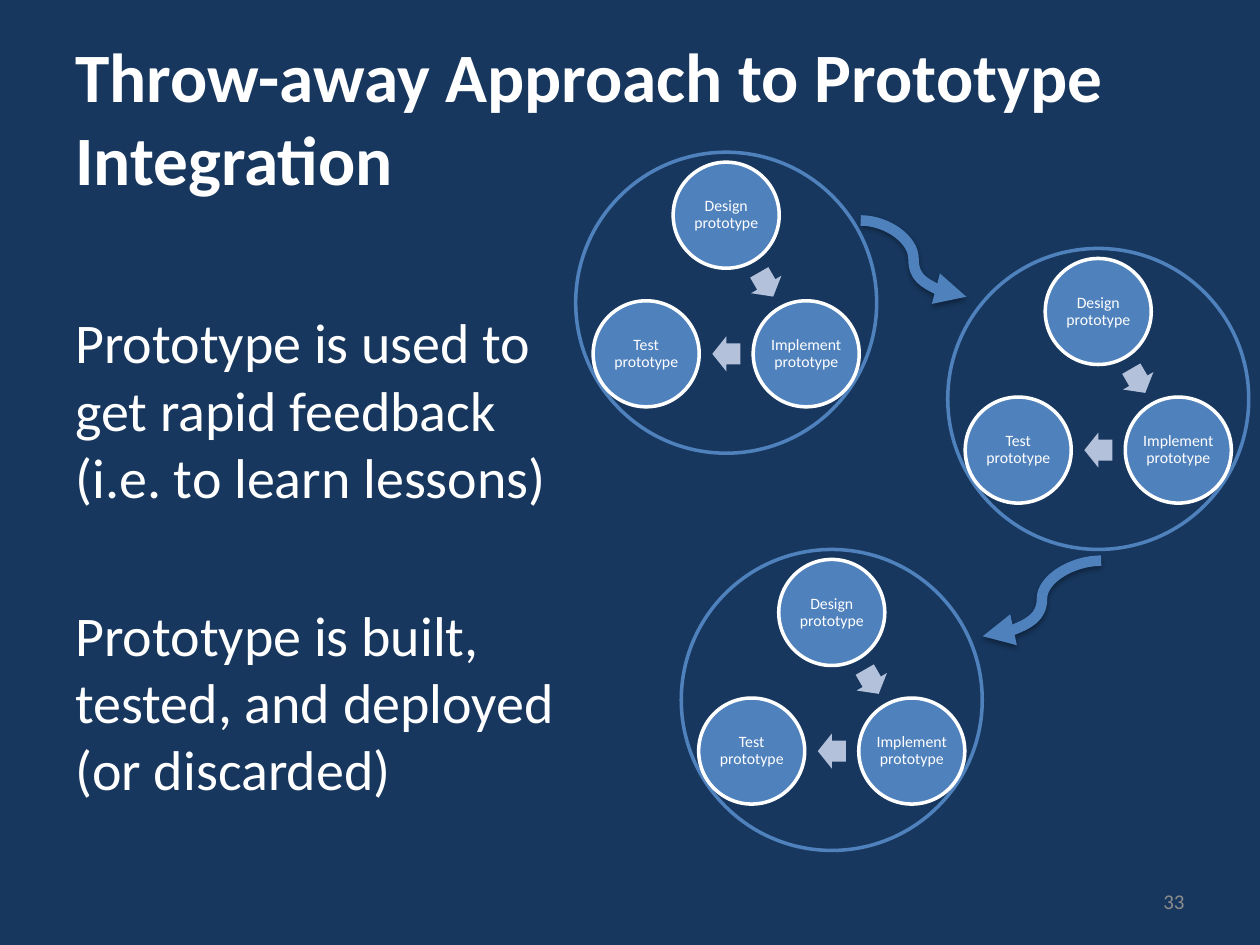
import math

from lxml import etree
from pptx import Presentation
from pptx.dml.color import RGBColor
from pptx.enum.shapes import MSO_CONNECTOR, MSO_SHAPE
from pptx.enum.text import MSO_ANCHOR, PP_ALIGN
from pptx.oxml import parse_xml
from pptx.oxml.ns import nsdecls, qn
from pptx.util import Pt

OVAL, ARROW, CURVE = MSO_SHAPE.OVAL, MSO_SHAPE.RIGHT_ARROW, MSO_CONNECTOR.CURVE
TOP, MIDDLE = MSO_ANCHOR.TOP, MSO_ANCHOR.MIDDLE
LEFT, CENTER, RIGHT = PP_ALIGN.LEFT, PP_ALIGN.CENTER, PP_ALIGN.RIGHT

NAVY, BLUE, PALE, WHITE, GRAY = "17375E", "4F81BD", "B3C1DB", "FFFFFF", "8C8C8C"
FONT = "Calibri"

TITLE = "Throw-away Approach to Prototype Integration"
POINTS = [
    "Prototype is used to get rapid feedback (i.e. to learn lessons)",
    "Prototype is built, tested, and deployed (or discarded)",
]
PAGE_NUMBER = "33"
STEPS = [  # label, angle on the cycle in degrees
    ("Design prototype", -90),
    ("Implement prototype", 30),
    ("Test prototype", 150),
]
RINGS = [(329, 87), (541.6, 142), (389.3, 314)]  # left, top
HANDOVERS = [  # from, to
    ((491.8, 126), (552.2, 169.6)),
    ((629.3, 320.4), (561.6, 363.6)),
]

RING_SIZE, NODE_SIZE = 172, 60.6
CYCLE_RADIUS, CYCLE_DROP = 52.8, 88.8
ARROW_WIDTH, ARROW_HEIGHT = 16, 20


def color(value):
    return RGBColor.from_string(value)


def write(shape, texts, size, ink, align=LEFT, anchor=TOP, bold=False):
    frame = shape.text_frame
    frame.word_wrap = True
    frame.vertical_anchor = anchor
    frame.text = "\n".join(texts)
    for para in frame.paragraphs:
        para.alignment = align
        para.font.name = FONT
        para.font.size = Pt(size)
        para.font.bold = bold
        para.font.color.rgb = color(ink)
    return frame


def add_text(page, area, *args, **options):
    box = page.shapes.add_textbox(*map(Pt, area))
    return write(box, *args, **options)


def add_centered(shapes, kind, x, y, width, height, fill=None, line=None):
    """Add a preset shape whose middle is at x, y."""
    shape = shapes.add_shape(
        kind, Pt(x - width / 2), Pt(y - height / 2), Pt(width), Pt(height))
    shape.shadow.inherit = False
    if fill:
        shape.fill.solid()
        shape.fill.fore_color.rgb = color(fill)
    else:
        shape.fill.background()
    if line:
        shape.line.color.rgb = color(line)
        shape.line.width = Pt(2)
    else:
        shape.line.fill.background()
    return shape


def add_cycle(page, left, top):
    """Add a ring holding the three steps and the arrows between them."""
    middle = left + RING_SIZE / 2
    add_centered(page.shapes, OVAL, middle, top + RING_SIZE / 2,
                 RING_SIZE, RING_SIZE, line=BLUE)
    cycle = page.shapes.add_group_shape().shapes
    previous = None
    for label, degrees in STEPS:
        angle = math.radians(degrees)
        x = middle + CYCLE_RADIUS * math.cos(angle)
        y = top + CYCLE_DROP + CYCLE_RADIUS * math.sin(angle)
        if previous:
            before_x, before_y = previous
            arrow = add_centered(cycle, ARROW, (before_x + x) / 2, (before_y + y) / 2,
                                 ARROW_WIDTH, ARROW_HEIGHT, fill=PALE)
            arrow.adjustments[0] = 0.6
            arrow.rotation = math.degrees(math.atan2(y - before_y, x - before_x))
        node = add_centered(cycle, OVAL, x, y, NODE_SIZE, NODE_SIZE, BLUE, WHITE)
        frame = write(node, [label], 9, WHITE, CENTER, MIDDLE)
        frame.margin_left = frame.margin_right = Pt(0.9)
        frame.margin_top = frame.margin_bottom = Pt(0.9)
        frame.paragraphs[0].line_spacing = 0.9
        previous = x, y


def add_handover(page, start, end):
    """Add a thick curved arrow with a soft shadow below it."""
    curve = page.shapes.add_connector(CURVE, *map(Pt, start + end))
    curve.line.color.rgb = color(BLUE)
    curve.line.width = Pt(6)
    properties = curve.element.spPr
    etree.SubElement(properties.find(qn("a:ln")), qn("a:tailEnd"), type="triangle")
    properties.append(parse_xml(
        f'<a:effectLst {nsdecls("a")}>'
        f'<a:outerShdw blurRad="{Pt(3.1)}" dist="{Pt(1.8)}" dir="5400000" rotWithShape="0">'
        '<a:srgbClr val="000000"><a:alpha val="35000"/></a:srgbClr>'
        '</a:outerShdw></a:effectLst>'))


def main():
    deck = Presentation()
    deck.slide_width, deck.slide_height = Pt(720), Pt(540)
    page = deck.slides.add_slide(deck.slide_layouts[6])
    page.background.fill.solid()
    page.background.fill.fore_color.rgb = color(NAVY)

    add_text(page, (36, 21.6, 648, 90), [TITLE], 39.6, WHITE, anchor=MIDDLE, bold=True)
    body = add_text(page, (36, 126, 304, 403.2), POINTS, 32, WHITE)
    body.margin_top = Pt(50)
    body.paragraphs[1].space_before = Pt(51.8)
    add_text(page, (516, 500.5, 168, 28.8), [PAGE_NUMBER], 12, GRAY, RIGHT, MIDDLE)

    for left, top in RINGS:
        add_cycle(page, left, top)
    for start, end in HANDOVERS:
        add_handover(page, start, end)
    deck.save("out.pptx")


if __name__ == "__main__":
    main()
